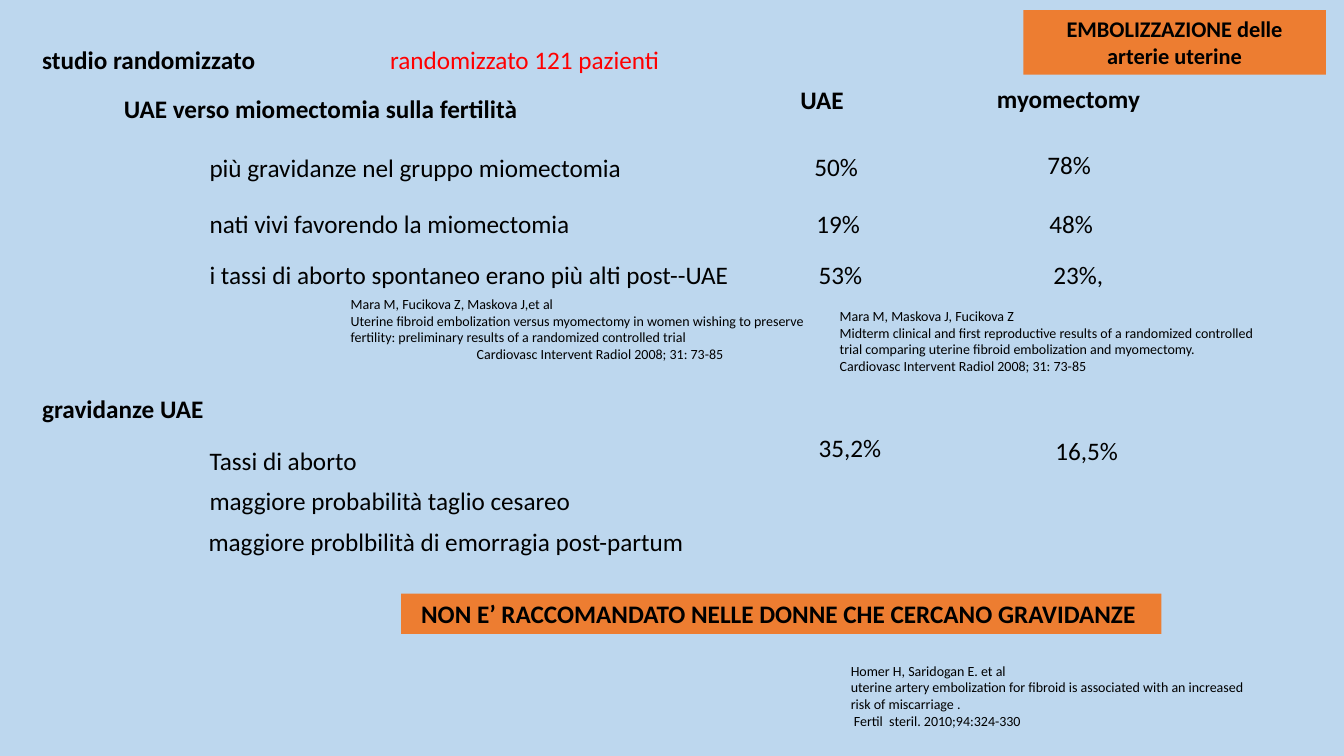
from dataclasses import dataclass

from pptx import Presentation
from pptx import util as u
from pptx.dml.color import RGBColor
from pptx.enum import shapes, text

PX = 9144  # EMU per px, 100 px to the inch
SKY, ORANGE, BLACK, RED = "BDD7EE", "ED7D31", "000000", "FF0000"
LINE = 40  # height of a one-line box


@dataclass
class Label:
    words: str
    left: int
    top: int
    width: int
    bold: bool = False
    tint: str = BLACK
    wrap: bool = False


@dataclass
class Source:
    lines: list[str]
    left: int
    top: int
    width: int
    inset: int = 0  # left margin of the last line


def px(count: int) -> u.Emu:
    return u.Emu(count * PX)


def color(code: str) -> RGBColor:
    return RGBColor.from_string(code)


def place(shape, left: int, top: int, width: int, height: int) -> None:
    box = {"left": left, "top": top, "width": width, "height": height}
    for name, value in box.items():
        setattr(shape, name, px(value))


def write(shape, lines: list[str], size: int, bold: bool = False,
          tint: str = BLACK, wrap: bool = True, align=text.PP_ALIGN.LEFT,
          fit=text.MSO_AUTO_SIZE.SHAPE_TO_FIT_TEXT) -> None:
    frame = shape.text_frame
    frame.word_wrap = wrap
    frame.auto_size = fit
    look = {"name": "Calibri", "size": u.Pt(size), "bold": bold}
    for i, line in enumerate(lines):
        para = frame.add_paragraph() if i else frame.paragraphs[0]
        para.alignment = align
        run = para.add_run()
        run.text = line
        for name, value in look.items():
            setattr(run.font, name, value)
        run.font.color.rgb = color(tint)


def banner(shape, words: str, size: int) -> None:
    shape.fill.solid()
    shape.fill.fore_color.rgb = color(ORANGE)
    shape.line.fill.background()
    frame = {"margin_left": px(10), "margin_right": px(10),
             "margin_top": px(5), "margin_bottom": px(5),
             "vertical_anchor": text.MSO_ANCHOR.MIDDLE}
    for name, value in frame.items():
        setattr(shape.text_frame, name, value)
    # A fixed size keeps the title from growing to its layout height
    write(shape, [words], size, bold=True, align=text.PP_ALIGN.CENTER,
          fit=text.MSO_AUTO_SIZE.NONE)


def label(slide, item: Label) -> None:
    box = slide.shapes.add_textbox(
        px(item.left), px(item.top), px(item.width), px(LINE))
    write(box, [item.words], 18, item.bold, item.tint, item.wrap)


def source(slide, item: Source) -> None:
    box = slide.shapes.add_textbox(
        px(item.left), px(item.top), px(item.width), px(77))
    write(box, item.lines, 10)
    if item.inset:
        last = box.text_frame.paragraphs[-1]
        last._p.get_or_add_pPr().set("marL", str(px(item.inset)))


LABELS = [
    # Headings
    Label("studio randomizzato", 32, 39, 233, bold=True),
    Label("randomizzato 121 pazienti", 377, 39, 296, tint=RED),
    Label("UAE verso miomectomia sulla fertilità", 113, 88, 414, bold=True),
    Label("UAE", 784, 79, 69, bold=True),
    Label("myomectomy", 979, 78, 163, bold=True),
    Label("gravidanze UAE", 32, 385, 187, bold=True),
    # Findings
    Label("più gravidanze nel gruppo miomectomia", 198, 146, 434),
    Label("nati vivi favorendo la miomectomia", 198, 202, 382),
    Label("i tassi di aborto spontaneo erano più alti post--UAE",
          198, 252, 540, wrap=True),
    Label("Tassi di aborto", 198, 437, 200, wrap=True),
    Label("maggiore probabilità taglio cesareo", 198, 477, 388),
    Label("maggiore problbilità di emorragia post-partum", 197, 517, 497),
    # UAE rates
    Label("50%", 798, 145, 64),
    Label("19%", 800, 202, 64),
    Label("53%", 802, 252, 64),
    Label("35,2%", 802, 424, 89),
    # Myomectomy rates
    Label("78%", 1029, 143, 64),
    Label("48%", 1031, 202, 64),
    Label("23%,", 1035, 252, 76),
    Label("16,5%", 1037, 427, 83),
]

SOURCES = [
    Source(["Mara M, Fucikova Z, Maskova J,et al",
            "Uterine fibroid embolization versus myomectomy in women wishing "
            "to preserve fertility: preliminary results of a randomized "
            "controlled trial",
            "Cardiovasc Intervent Radiol 2008; 31: 73-85"],
           338, 288, 479, inset=125),
    Source(["Mara M, Maskova J, Fucikova Z",
            "Midterm clinical and first reproductive results of a randomized "
            "controlled trial comparing uterine fibroid embolization and "
            "myomectomy.",
            "Cardiovasc Intervent Radiol 2008; 31: 73-85"], 823, 300, 434),
    Source(["Homer H, Saridogan E. et al",
            "uterine artery embolization for fibroid is associated with an "
            "increased risk of miscarriage .",
            " Fertil  steril. 2010;94:324-330"], 834, 652, 428),
]


def main() -> None:
    deck = Presentation()
    deck.slide_width, deck.slide_height = px(1333), px(750)
    slide = deck.slides.add_slide(deck.slide_layouts.get_by_name("Title Only"))
    slide.background.fill.solid()
    slide.background.fill.fore_color.rgb = color(SKY)

    # Title
    title = slide.shapes.title
    place(title, 1015, 10, 300, 64)
    banner(title, "EMBOLIZZAZIONE delle arterie uterine", 16)

    # Findings and their sources
    for item in LABELS:
        label(slide, item)
    for item in SOURCES:
        source(slide, item)

    # Verdict
    verdict = slide.shapes.add_shape(
        shapes.MSO_SHAPE.RECTANGLE, px(398), px(589), px(754), px(LINE))
    verdict.shadow.inherit = False
    banner(verdict, "NON E’ RACCOMANDATO NELLE DONNE CHE CERCANO GRAVIDANZE ", 18)

    deck.save("out.pptx")


if __name__ == "__main__":
    main()
